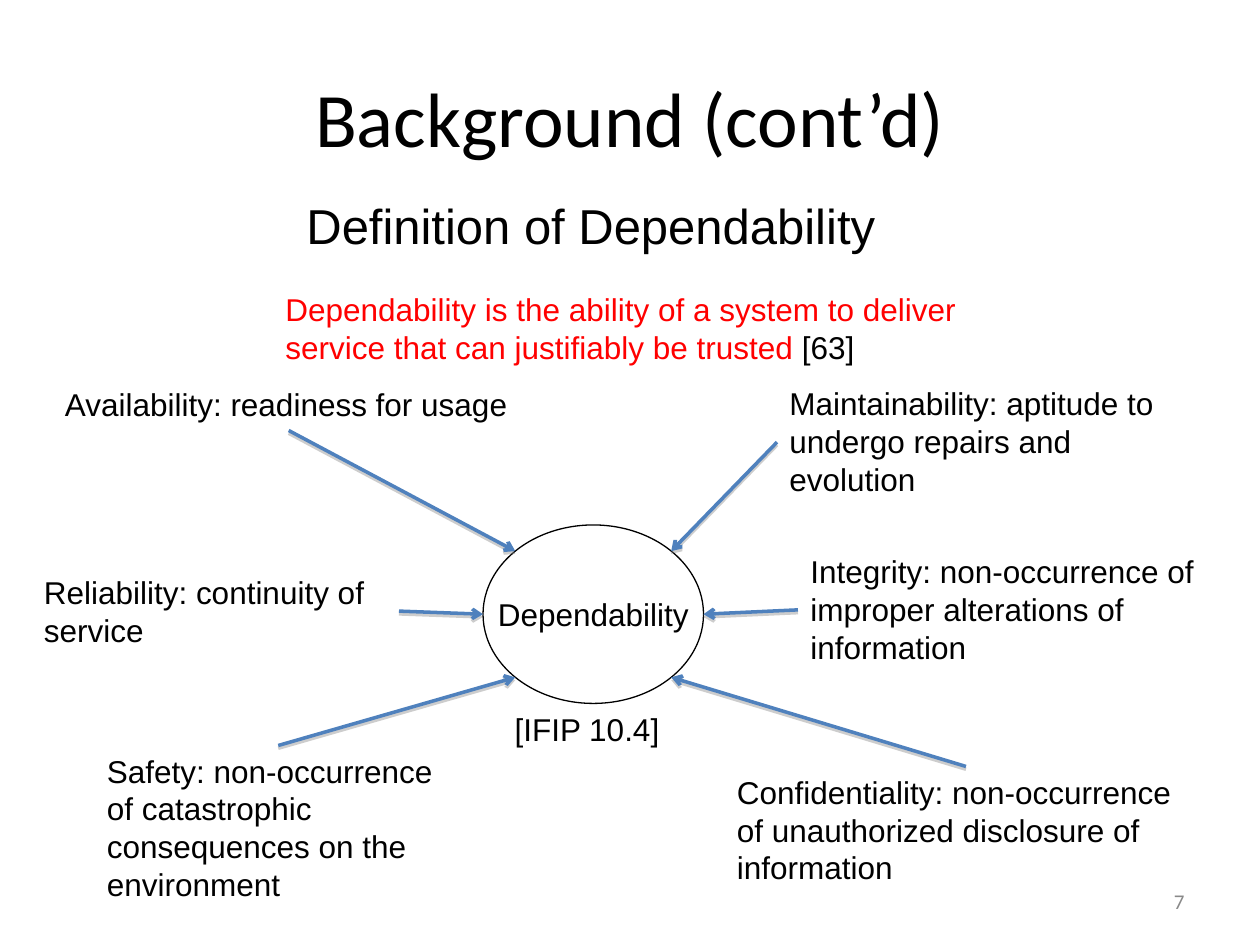
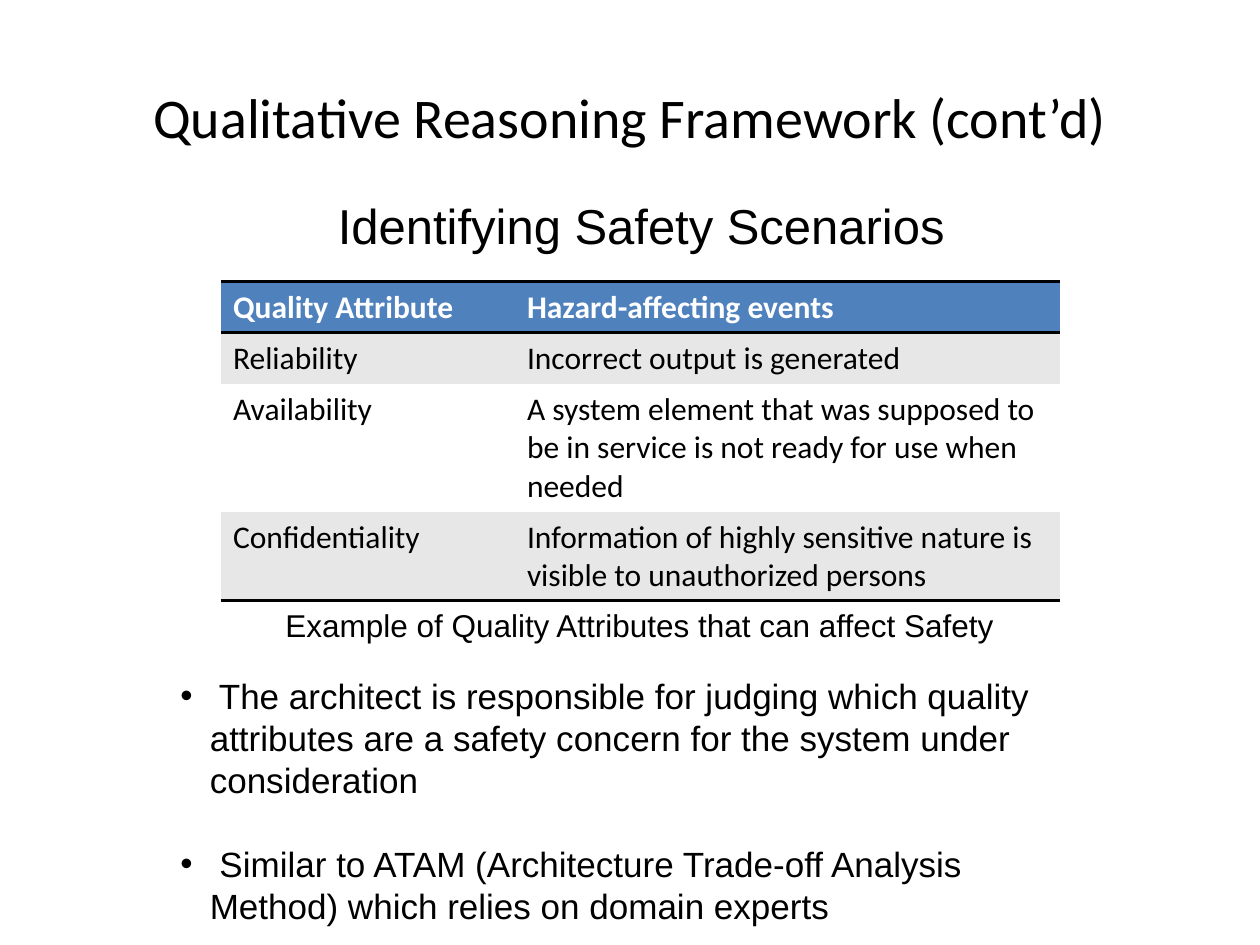
from dataclasses import dataclass
from math import cos, radians, sin

from lxml.etree import SubElement
from pptx import Presentation
from pptx.dml.color import RGBColor
from pptx.enum.shapes import MSO_CONNECTOR as Connector, MSO_SHAPE as Shape
from pptx.enum.text import MSO_ANCHOR as Anchor, MSO_AUTO_SIZE as AutoSize, PP_ALIGN as Align
from pptx.oxml.ns import qn
from pptx.util import Pt

BLACK = RGBColor(0x00, 0x00, 0x00)
WHITE = RGBColor(0xFF, 0xFF, 0xFF)
RED = RGBColor(0xFF, 0x00, 0x00)
BLUE = RGBColor(0x4F, 0x81, 0xBD)
GREY = RGBColor(0x89, 0x89, 0x89)
BAND = RGBColor(0xE7, 0xE7, 0xE7)
SHADOW = RGBColor(0x80, 0x80, 0x80)

BODY = {"name": "Arial", "size": Pt(18)}
SUBTITLE = {"name": "Arial", "size": Pt(28)}
BULLET = {"name": "Arial", "size": Pt(20)}
NUMBER = {"name": "Calibri", "size": Pt(12)}
HEADER_CELL = {"name": "Calibri", "size": Pt(18), "bold": True}
BODY_CELL = {"name": "Calibri", "size": Pt(18), "bold": False}

ATTRIBUTES = [
    ("Availability: readiness for usage", (12, 0.7, 270, 29), (147, 30), 225),
    ("Reliability: continuity of service", (0, 108, 210, 51), (210, 133.2), 180),
    ("Safety: non-occurrence of catastrophic consequences on the environment",
     (36, 210, 210, 94), (141, 210), 135),
    ("Maintainability: aptitude to undergo repairs and evolution",
     (426, 0, 234, 73), (426, 36.7), 315),
    ("Integrity: non-occurrence of improper alterations of information",
     (438, 96, 240, 73), (438, 132.5), 0),
    ("Confidentiality: non-occurrence of unauthorized disclosure of information",
     (396, 222, 276, 73), (534, 222), 45),
]

EVENTS = [
    ("Quality Attribute", "Hazard-affecting events"),
    ("Reliability", "Incorrect output is generated"),
    ("Availability",
     "A system element that was supposed to be in service is not ready for use when needed"),
    ("Confidentiality",
     "Information of highly sensitive nature is visible to unauthorized persons"),
]

DUTIES = [
    " The architect is responsible for judging which quality attributes are a safety "
    "concern for the system under consideration",
    " Similar to ATAM (Architecture Trade-off Analysis Method) which relies on domain experts",
]


@dataclass
class Box:
    left: float
    top: float
    width: float
    height: float

    def inside(self, left, top, width, height):
        return Box(self.left + left, self.top + top, width, height)

    def lengths(self):
        return [Pt(value) for value in (self.left, self.top, self.width, self.height)]


TITLE_BOX = Box(36, 21.6, 648, 90)


def apply(target, values):
    for name, value in values.items():
        setattr(target, name, value)


def write(para, text, style, color=BLACK):
    span = para.add_run()
    span.text = text
    apply(span.font, style)
    span.font.color.rgb = color


def add_text(page, box, lines, style=BODY, align=Align.LEFT, anchor=Anchor.TOP):
    frame = page.shapes.add_textbox(*box.lengths()).text_frame
    apply(frame, {"word_wrap": True, "vertical_anchor": anchor,
                  "auto_size": AutoSize.SHAPE_TO_FIT_TEXT})
    for index, spans in enumerate(lines):
        para = frame.add_paragraph() if index else frame.paragraphs[0]
        para.alignment = align
        for text, color in spans:
            write(para, text, style, color)
    return frame


def add_page(deck, title, size):
    page = deck.slides.add_slide(deck.slide_layouts[5])
    holder = page.shapes.title
    apply(holder, dict(zip(("left", "top", "width", "height"), TITLE_BOX.lengths())))
    holder.text_frame.vertical_anchor = Anchor.MIDDLE
    para = holder.text_frame.paragraphs[0]
    para.alignment = Align.CENTER
    write(para, title, {"name": "Calibri", "size": Pt(size)})
    return page


def add_arrow(page, start, end):
    arrow = page.shapes.add_connector(
        Connector.STRAIGHT, *[Pt(value) for value in (*start, *end)])
    arrow.line.width = Pt(2)
    arrow.line.color.rgb = BLUE
    SubElement(arrow.line._get_or_add_ln(), qn("a:tailEnd"), type="arrow")
    effects = SubElement(arrow._element.spPr, qn("a:effectLst"))
    shadow = SubElement(effects, qn("a:outerShdw"), blurRad="0", dist=str(Pt(1.6)),
                        dir="5400000", rotWithShape="0")
    color = SubElement(shadow, qn("a:srgbClr"), val=str(SHADOW))
    SubElement(color, qn("a:alpha"), val="38000")


def add_hub(page, box):
    hub = page.shapes.add_shape(Shape.OVAL, *box.lengths())
    hub.shadow.inherit = False
    hub.fill.solid()
    hub.fill.fore_color.rgb = WHITE
    hub.line.color.rgb = BLACK
    hub.line.width = Pt(0.75)
    apply(hub.text_frame, {"word_wrap": False, "vertical_anchor": Anchor.MIDDLE})
    para = hub.text_frame.paragraphs[0]
    para.alignment = Align.CENTER
    write(para, "Dependability", BODY)


def rim_point(box, angle):
    return (box.left + box.width / 2 * (1 + cos(radians(angle))),
            box.top + box.height / 2 * (1 + sin(radians(angle))))


def add_dependability_map(page, box):
    hub_box = box.inside(258, 84, 126, 102)
    add_hub(page, hub_box)
    for text, place, (left, top), angle in ATTRIBUTES:
        add_text(page, box.inside(*place), [[(text, BLACK)]])
        add_arrow(page, (box.left + left, box.top + top), rim_point(hub_box, angle))
    add_text(page, box.inside(264, 186, 126, 29), [[(" [IFIP 10.4]", BLACK)]])


def set_borders(cell, black_sides):
    properties = cell._tc.get_or_add_tcPr()
    for side in "LRTB":
        border = SubElement(properties, qn(f"a:ln{side}"), w=str(Pt(2)))
        if side in black_sides:
            fill = SubElement(border, qn("a:solidFill"))
            SubElement(fill, qn("a:srgbClr"), val=str(BLACK))
        else:
            SubElement(border, qn("a:noFill"))


def add_event_table(page, box):
    table = page.shapes.add_table(len(EVENTS), 2, *box.lengths()).table
    for column, width in zip(table.columns, (168, 312)):
        column.width = Pt(width)
    for row, height in zip(table.rows, (29.2, 29.2, 73, 50.6)):
        row.height = Pt(height)
    for index, texts in enumerate(EVENTS):
        header = index == 0
        fill = BLUE if header else BAND if index % 2 else WHITE
        sides = {0: "TB", 1: "T", len(EVENTS) - 1: "B"}.get(index, "")
        for column, text in enumerate(texts):
            cell = table.cell(index, column)
            set_borders(cell, sides)
            cell.fill.solid()
            cell.fill.fore_color.rgb = fill
            write(cell.text_frame.paragraphs[0], text,
                  HEADER_CELL if header else BODY_CELL, WHITE if header else BLACK)


def add_duties(page, box):
    frame = add_text(page, box, [[(text, BLACK)] for text in DUTIES], BULLET)
    for index, para in enumerate(frame.paragraphs):
        para.space_before = Pt(24 if index else 0)
        properties = para._p.get_or_add_pPr()
        properties.set("marL", str(Pt(16.8)))
        properties.set("indent", str(Pt(-16.8)))
        SubElement(properties, qn("a:buFont"), typeface="Arial")
        SubElement(properties, qn("a:buChar"), char="•")


def build_background(deck):
    page = add_page(deck, "Background (cont’d)", 44)
    add_text(page, Box(516, 500.5, 168, 28.8), [[("7", GREY)]], NUMBER,
             Align.RIGHT, Anchor.MIDDLE)
    add_text(page, Box(168, 108, 342, 41), [[("Definition of Dependability", BLACK)]], SUBTITLE)
    add_text(page, Box(156, 162, 408, 51), [
        [("Dependability is the ability of a system to deliver", RED)],
        [("service that can justifiably be trusted ", RED), ("[63]", BLACK)],
    ])
    add_dependability_map(page, Box(18, 216, 678, 305))


def build_framework(deck):
    page = add_page(deck, "Qualitative Reasoning Framework (cont’d)", 32)
    add_text(page, Box(186, 108, 372, 41), [[("Identifying Safety Scenarios", BLACK)]], SUBTITLE)
    add_event_table(page, Box(126, 161, 480, 182))
    add_text(page, Box(156, 342.7, 438, 29),
             [[("Example of Quality Attributes that can affect Safety", BLACK)]])
    add_duties(page, Box(96, 381.6, 534, 152.6))


def main():
    deck = Presentation()
    deck.slide_width, deck.slide_height = Pt(720), Pt(540)
    build_background(deck)
    build_framework(deck)
    deck.save("out.pptx")


if __name__ == "__main__":
    main()
